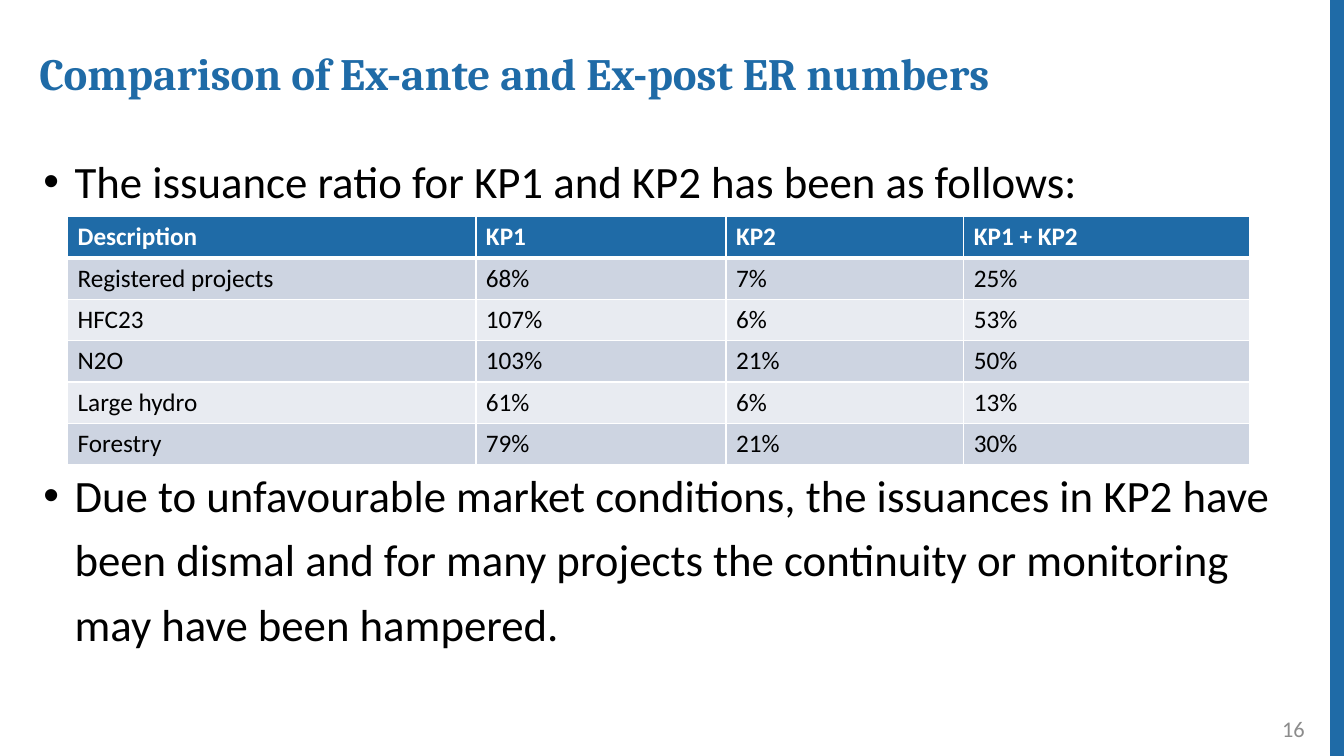
import dataclasses

import pptx
import pptx.dml.color
import pptx.enum.shapes
import pptx.enum.text
import pptx.oxml
import pptx.oxml.ns
import pptx.util
from pptx.util import Inches

COLORS = {
    "blue": "1F6BA7",
    "white": "FFFFFF",
    "black": "000000",
    "gray": "8C8C8C",
    "dark_band": "CDD4E1",
    "light_band": "E8EBF1",
}
COLUMN_WIDTHS = (4.05, 2.48, 2.36, 2.83)
ROW_HEIGHT = 0.41


@dataclasses.dataclass
class IssuanceRatio:
    description: str
    kp1: str
    kp2: str
    combined: str


@dataclasses.dataclass
class Bullet:
    text: str
    space_before: float


RATIOS = [
    IssuanceRatio("Description", "KP1", "KP2", "KP1 + KP2"),
    IssuanceRatio("Registered projects", "68%", "7%", "25%"),
    IssuanceRatio("HFC23", "107%", "6%", "53%"),
    IssuanceRatio("N2O", "103%", "21%", "50%"),
    IssuanceRatio("Large hydro", "61%", "6%", "13%"),
    IssuanceRatio("Forestry", "79%", "21%", "30%"),
]
BULLETS = [
    Bullet("The issuance ratio for KP1 and KP2 has been as follows:", 0),
    Bullet(
        "Due to unfavourable market conditions, the issuances in KP2 have been dismal "
        "and for many projects the continuity or monitoring may have been hampered.",
        178,
    ),
]


def rgb(color: str) -> pptx.dml.color.RGBColor:
    return pptx.dml.color.RGBColor.from_string(COLORS[color])


def write_text(paragraph, text: str, *, size: float, color: str = "black",
               font: str = "Calibri", bold: bool = False, align: str = "LEFT",
               line_spacing: float = 1.0, space_before: float = 0) -> None:
    paragraph.alignment = getattr(pptx.enum.text.PP_ALIGN, align)
    paragraph.line_spacing = line_spacing
    paragraph.space_before = pptx.util.Pt(space_before)
    run = paragraph.add_run()
    run.text = text
    run.font.name = font
    run.font.size = pptx.util.Pt(size)
    run.font.bold = bold
    run.font.color.rgb = rgb(color)


def place(shape, left: float, top: float, width: float, height: float) -> None:
    shape.left, shape.top = Inches(left), Inches(top)
    shape.width, shape.height = Inches(width), Inches(height)
    frame = shape.text_frame
    frame.word_wrap = True
    frame.auto_size = pptx.enum.text.MSO_AUTO_SIZE.NONE
    frame.vertical_anchor = pptx.enum.text.MSO_ANCHOR.TOP


def add_edge_line(slide) -> None:
    edge = slide.shapes.add_connector(
        pptx.enum.shapes.MSO_CONNECTOR.STRAIGHT,
        Inches(13.27), Inches(0), Inches(13.27), Inches(7.5))
    edge.line.color.rgb = rgb("blue")
    edge.line.width = pptx.util.Pt(12)
    edge._element.spPr.append(pptx.oxml.parse_xml(
        f"<a:effectLst {pptx.oxml.ns.nsdecls('a')}/>"))


def fill_body(body) -> None:
    place(body, 0.33, 1.36, 12.7, 5.72)
    frame = body.text_frame
    frame.margin_top = Inches(0.06)
    for index, bullet in enumerate(BULLETS):
        paragraph = frame.add_paragraph() if index else frame.paragraphs[0]
        properties = paragraph._p.get_or_add_pPr()
        properties.set("marL", str(Inches(0.31)))
        properties.set("indent", str(-Inches(0.31)))
        for marker in ('buFont typeface="Arial"', 'buChar char="•"'):
            tag, attribute = marker.split(" ")
            properties.append(pptx.oxml.parse_xml(
                f"<a:{tag} {pptx.oxml.ns.nsdecls('a')} {attribute}/>"))
        write_text(paragraph, bullet.text, size=32, line_spacing=1.2,
                   space_before=bullet.space_before)


def add_cell_borders(cell, top: float, bottom: float) -> None:
    properties = cell._tc.get_or_add_tcPr()
    for side, points in {"L": 1, "R": 1, "T": top, "B": bottom}.items():
        properties.append(pptx.oxml.parse_xml(
            f"<a:ln{side} {pptx.oxml.ns.nsdecls('a')} w=\"{pptx.util.Pt(points)}\">"
            f"<a:solidFill><a:srgbClr val=\"{COLORS['white']}\"/></a:solidFill>"
            f"</a:ln{side}>"))


def add_ratio_table(slide) -> None:
    table = slide.shapes.add_table(
        len(RATIOS), len(COLUMN_WIDTHS), Inches(0.67), Inches(2.15),
        Inches(sum(COLUMN_WIDTHS)), Inches(ROW_HEIGHT * len(RATIOS))).table
    for column, width in zip(table.columns, COLUMN_WIDTHS):
        column.width = Inches(width)
    for row, ratio in enumerate(RATIOS):
        header = row == 0
        band = "blue" if header else "dark_band" if row % 2 else "light_band"
        for column, value in enumerate(dataclasses.astuple(ratio)):
            cell = table.cell(row, column)
            add_cell_borders(cell, 3 if row == 1 else 1, 3 if header else 1)
            cell.fill.solid()
            cell.fill.fore_color.rgb = rgb(band)
            write_text(cell.text_frame.paragraphs[0], value, size=18, bold=header,
                       color="white" if header else "black")


def main() -> None:
    presentation = pptx.Presentation()
    presentation.slide_width = Inches(13.33)
    presentation.slide_height = Inches(7.5)
    slide = presentation.slides.add_slide(presentation.slide_layouts[1])

    add_edge_line(slide)
    fill_body(slide.placeholders[1])

    title = slide.shapes.title
    place(title, 0.29, 0.46, 11.96, 0.58)
    write_text(title.text_frame.paragraphs[0],
               "Comparison of Ex-ante and Ex-post ER numbers", size=32,
               color="blue", font="Cambria", bold=True, line_spacing=0.9)

    page_number = slide.shapes.add_textbox(0, 0, 0, 0)
    place(page_number, 10.04, 7.03, 3, 0.4)
    page_number.text_frame.vertical_anchor = pptx.enum.text.MSO_ANCHOR.MIDDLE
    write_text(page_number.text_frame.paragraphs[0], "16", size=16,
               color="gray", align="RIGHT")

    add_ratio_table(slide)
    presentation.save("out.pptx")


if __name__ == "__main__":
    main()
